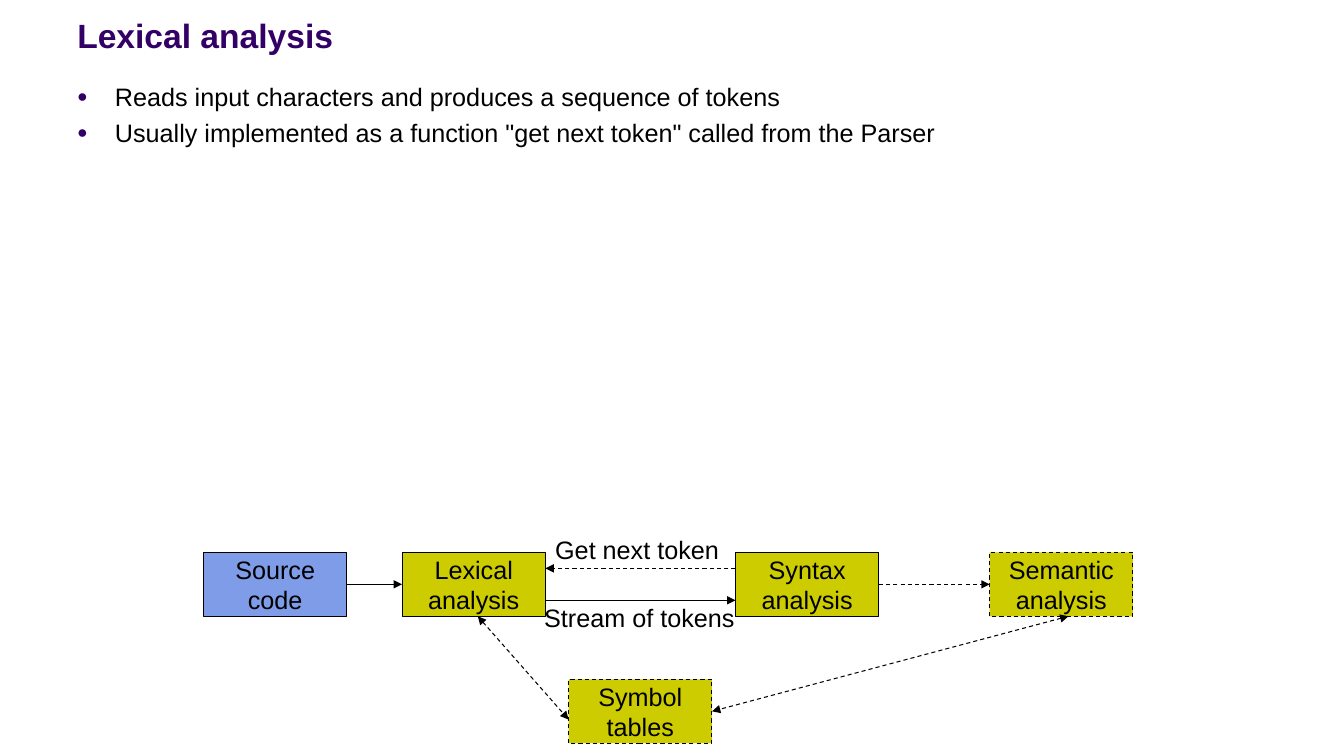
from lxml.etree import SubElement
from pptx import Presentation
from pptx.dml.color import RGBColor
from pptx.enum.dml import MSO_LINE
from pptx.enum.shapes import MSO_CONNECTOR, MSO_SHAPE
from pptx.enum.text import MSO_ANCHOR, MSO_AUTO_SIZE, PP_ALIGN
from pptx.oxml.ns import qn
from pptx.util import Pt

BLACK = RGBColor(0x00, 0x00, 0x00)
PURPLE = RGBColor(0x33, 0x00, 0x66)
OLIVE = RGBColor(0xCC, 0xCC, 0x00)
BLUE = RGBColor(0x7E, 0x9C, 0xE8)

TOP, LEFT, BOTTOM, RIGHT = range(4)
BOX_WIDTH, BOX_HEIGHT = 102.4, 45.6
ROW_TOP = 394.6
SYMBOL_TOP = 485.3


def write(para, text, size=18, color=BLACK, bold=False, align=PP_ALIGN.LEFT):
    """Fill a paragraph; a newline in the text becomes a line break."""
    para.alignment = align
    for index, line in enumerate(text.split("\n")):
        if index:
            para.add_line_break()
        span = para.add_run()
        span.text = line
        span.font.name = "Arial"
        span.font.size = Pt(size)
        span.font.bold = bold
        span.font.color.rgb = color


def add_bullet(para, hang):
    properties = para._p.get_or_add_pPr()
    properties.set("marL", str(Pt(hang)))
    properties.set("indent", str(-Pt(hang)))
    color = SubElement(properties, qn("a:buClr"))
    SubElement(color, qn("a:srgbClr"), val=str(PURPLE))
    SubElement(properties, qn("a:buSzPct"), val="70000")
    SubElement(properties, qn("a:buFont"), typeface="Arial")
    SubElement(properties, qn("a:buChar"), char="●")


class Diagram:
    line_width = 0.75

    def __init__(self, page):
        self.page = page
        self.shapes = page.shapes

    def style_line(self, line, dashed):
        line.color.rgb = BLACK
        line.width = Pt(self.line_width)
        if dashed:
            line.dash_style = MSO_LINE.DASH

    def title(self, text, left, top, width, height):
        title = self.shapes.title
        title.left, title.top = Pt(left), Pt(top)
        title.width, title.height = Pt(width), Pt(height)
        frame = title.text_frame
        frame.auto_size = MSO_AUTO_SIZE.NONE
        frame.vertical_anchor = MSO_ANCHOR.BOTTOM
        write(frame.paragraphs[0], text, size=24, color=PURPLE, bold=True)

    def bullets(self, texts, left, top, width, height):
        box = self.shapes.add_textbox(Pt(left), Pt(top), Pt(width), Pt(height))
        frame = box.text_frame
        frame.word_wrap = True
        for index, text in enumerate(texts):
            para = frame.add_paragraph() if index else frame.paragraphs[0]
            add_bullet(para, hang=27)
            para.space_before = Pt(4)
            write(para, text)

    def label(self, text, left, top, width, height=29):
        box = self.shapes.add_textbox(Pt(left), Pt(top), Pt(width), Pt(height))
        frame = box.text_frame
        frame.word_wrap = False
        frame.auto_size = MSO_AUTO_SIZE.SHAPE_TO_FIT_TEXT
        write(frame.paragraphs[0], text)

    def box(self, text, left, top=ROW_TOP, fill=OLIVE, dashed=False):
        box = self.shapes.add_shape(MSO_SHAPE.RECTANGLE, Pt(left), Pt(top),
                                    Pt(BOX_WIDTH), Pt(BOX_HEIGHT))
        box.shadow.inherit = False
        box.fill.solid()
        box.fill.fore_color.rgb = fill
        self.style_line(box.line, dashed)
        frame = box.text_frame
        frame.word_wrap = False
        frame.vertical_anchor = MSO_ANCHOR.MIDDLE
        write(frame.paragraphs[0], text, align=PP_ALIGN.CENTER)
        return box

    def arrow(self, start, end, dashed=True, both=False):
        """Each end is an (x, y) point or a (box, side) pair to join."""
        arrow = self.shapes.add_connector(MSO_CONNECTOR.STRAIGHT, 0, 0, 0, 0)
        if isinstance(start[0], (int, float)):
            arrow.begin_x, arrow.begin_y = Pt(start[0]), Pt(start[1])
        else:
            arrow.begin_connect(*start)
        if isinstance(end[0], (int, float)):
            arrow.end_x, arrow.end_y = Pt(end[0]), Pt(end[1])
        else:
            arrow.end_connect(*end)
        self.style_line(arrow.line, dashed)
        line = arrow.line._get_or_add_ln()
        if both:
            SubElement(line, qn("a:headEnd"), type="triangle")
        SubElement(line, qn("a:tailEnd"), type="triangle")
        SubElement(arrow._element.spPr, qn("a:effectLst"))


def main():
    deck = Presentation()
    deck.slide_width, deck.slide_height = Pt(960), Pt(540)
    diagram = Diagram(deck.slides.add_slide(deck.slide_layouts[5]))

    diagram.title("Lexical analysis", 48, 9.4, 792, 33.8)
    diagram.bullets([
        "Reads input characters and produces a sequence of tokens",
        'Usually implemented as a function "get next token" called from the Parser',
    ], 48, 54.7, 864, 452)

    source = diagram.box("Source\ncode", 145.4, fill=BLUE)
    lexical = diagram.box("Lexical\nanalysis", 287.2)
    syntax = diagram.box("Syntax\nanalysis", 525.4)
    semantic = diagram.box("Semantic\nanalysis", 706.9, dashed=True)
    symbols = diagram.box("Symbol\ntables", 406.2, SYMBOL_TOP, dashed=True)

    lexical_right, syntax_left = 287.2 + BOX_WIDTH, 525.4
    row_bottom = ROW_TOP + BOX_HEIGHT
    request_y = ROW_TOP + BOX_HEIGHT / 4
    stream_y = ROW_TOP + BOX_HEIGHT * 3 / 4

    diagram.arrow((source, RIGHT), (lexical, LEFT), dashed=False)
    diagram.arrow((lexical_right, stream_y), (syntax_left, stream_y), dashed=False)
    diagram.arrow((syntax_left, request_y), (lexical_right, request_y))
    diagram.arrow((syntax, RIGHT), (semantic, LEFT))
    diagram.arrow((341.3, row_bottom), (406.2, 514), both=True)
    diagram.arrow((763.2, row_bottom), (symbols, RIGHT), both=True)

    diagram.label("Get next token", 389.5, 378, 132.5)
    diagram.label("Stream of tokens", 381.6, 426.5, 152)

    deck.save("out.pptx")


if __name__ == "__main__":
    main()
